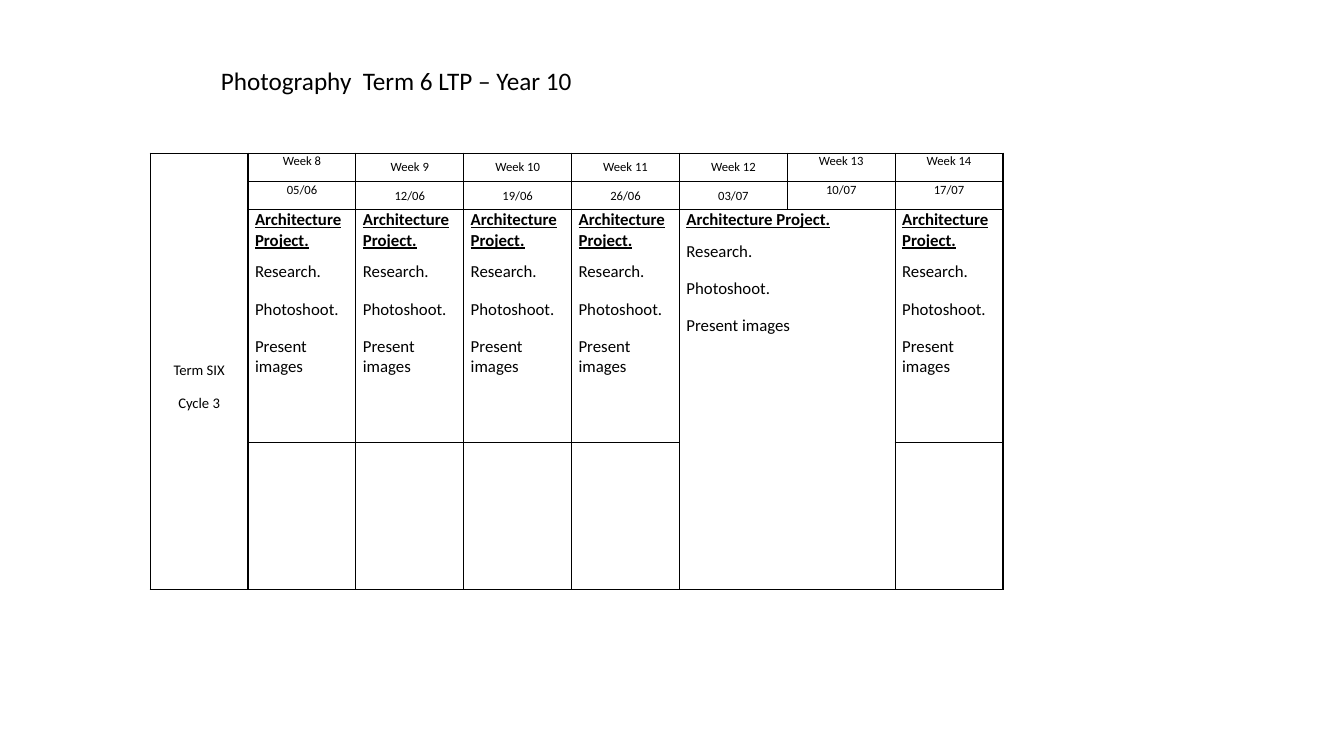
import dataclasses

import lxml.etree
import pptx
import pptx.dml.color
import pptx.enum.text
import pptx.oxml.ns
import pptx.util

Inches = pptx.util.Inches
Pt = pptx.util.Pt
Align = pptx.enum.text.PP_ALIGN
Anchor = pptx.enum.text.MSO_ANCHOR

COLOURS = {"ink": "000000", "paper": "FFFFFF"}
FONT = "Calibri"
HEADER_ROW, DATE_ROW, PROJECT_ROW, SPARE_ROW = range(4)
TERM_WIDTH, WEEK_WIDTH = 0.97, 1.07
ROW_HEIGHTS = [0.28, 0.28, 2.31, 1.46]
PROJECT_STEPS = ["Research.", "Photoshoot.", "Present images"]


@dataclasses.dataclass
class Week:
    number: int
    date: str
    anchor: Anchor = Anchor.MIDDLE
    has_project: bool = True


WEEKS = [
    Week(8, "05/06", Anchor.TOP),
    Week(9, "12/06"),
    Week(10, "19/06"),
    Week(11, "26/06"),
    Week(12, "03/07"),
    Week(13, "10/07", Anchor.TOP, has_project=False),
    Week(14, "17/07", Anchor.TOP),
]


def colour(name: str) -> pptx.dml.color.RGBColor:
    return pptx.dml.color.RGBColor.from_string(COLOURS[name])


def write(frame, text: str, *, size: float, align=Align.LEFT, heading: bool = False,
          spacing: float = 0, line: float | None = None) -> None:
    """Fill the first paragraph if it is free, otherwise add another."""
    paragraph = frame.add_paragraph() if frame.text else frame.paragraphs[0]
    paragraph.alignment = align
    paragraph.space_before = paragraph.space_after = Pt(spacing)
    if line:
        paragraph.line_spacing = Pt(line)
    run = paragraph.add_run()
    run.text = text
    run.font.name = FONT
    run.font.size = Pt(size)
    run.font.bold = run.font.underline = heading
    run.font.color.rgb = colour("ink")


def write_label(cell, text: str, size: float) -> None:
    write(cell.text_frame, text, size=size, align=Align.CENTER, spacing=6, line=11.4)


def write_project(cell) -> None:
    write(cell.text_frame, "Architecture Project.", size=12, heading=True, spacing=2)
    for step in PROJECT_STEPS:
        write(cell.text_frame, step, size=12, spacing=6)


def style_cell(cell) -> None:
    cell.margin_left = cell.margin_right = Inches(0.07)
    cell.margin_top = cell.margin_bottom = 0
    # Black border on all four sides
    qn = pptx.oxml.ns.qn
    properties = cell._tc.get_or_add_tcPr()
    for side in ("lnL", "lnR", "lnT", "lnB"):
        border = lxml.etree.SubElement(properties, qn(f"a:{side}"), w=str(Pt(1)))
        fill = lxml.etree.SubElement(border, qn("a:solidFill"))
        lxml.etree.SubElement(fill, qn("a:srgbClr"), val=COLOURS["ink"])
    cell.fill.solid()
    cell.fill.fore_color.rgb = colour("paper")


def add_title(slide) -> None:
    title = slide.shapes.title
    title.left, title.top = Inches(2.09), Inches(0.6)
    title.width, title.height = Inches(3.72), Inches(0.4)
    frame = title.text_frame
    frame.word_wrap = False
    frame.auto_size = pptx.enum.text.MSO_AUTO_SIZE.SHAPE_TO_FIT_TEXT
    frame.vertical_anchor = Anchor.TOP
    write(frame, "Photography  Term 6 LTP – Year 10", size=18)


def add_plan(slide) -> None:
    widths = [TERM_WIDTH] + [WEEK_WIDTH] * len(WEEKS)
    plan = slide.shapes.add_table(
        len(ROW_HEIGHTS), len(widths), Inches(1.49), Inches(1.52),
        Inches(sum(widths)), Inches(sum(ROW_HEIGHTS))).table
    plan.first_row = plan.horz_banding = False
    for column, width in zip(plan.columns, widths):
        column.width = Inches(width)
    for row, height in zip(plan.rows, ROW_HEIGHTS):
        row.height = Inches(height)
    for cell in plan.iter_cells():
        style_cell(cell)

    # Term label down the left side
    term = plan.cell(HEADER_ROW, 0)
    term.merge(plan.cell(SPARE_ROW, 0))
    term.vertical_anchor = Anchor.MIDDLE
    term.margin_top = Inches(0.32)
    for label in ("Term SIX", "Cycle 3"):
        write_label(term, label, 10.5)

    # Weeks 12 and 13 share one project cell
    plan.cell(PROJECT_ROW, 5).merge(plan.cell(SPARE_ROW, 6))

    # One column per week
    for column, week in enumerate(WEEKS, start=1):
        for row, label in ((HEADER_ROW, f"Week {week.number}"), (DATE_ROW, week.date)):
            cell = plan.cell(row, column)
            cell.vertical_anchor = week.anchor
            write_label(cell, label, 9)
        if week.has_project:
            write_project(plan.cell(PROJECT_ROW, column))


def main() -> None:
    deck = pptx.Presentation()
    deck.slide_width, deck.slide_height = Inches(13.33), Inches(7.5)
    slide = deck.slides.add_slide(deck.slide_layouts[5])
    add_plan(slide)
    add_title(slide)
    deck.save("out.pptx")


if __name__ == "__main__":
    main()
